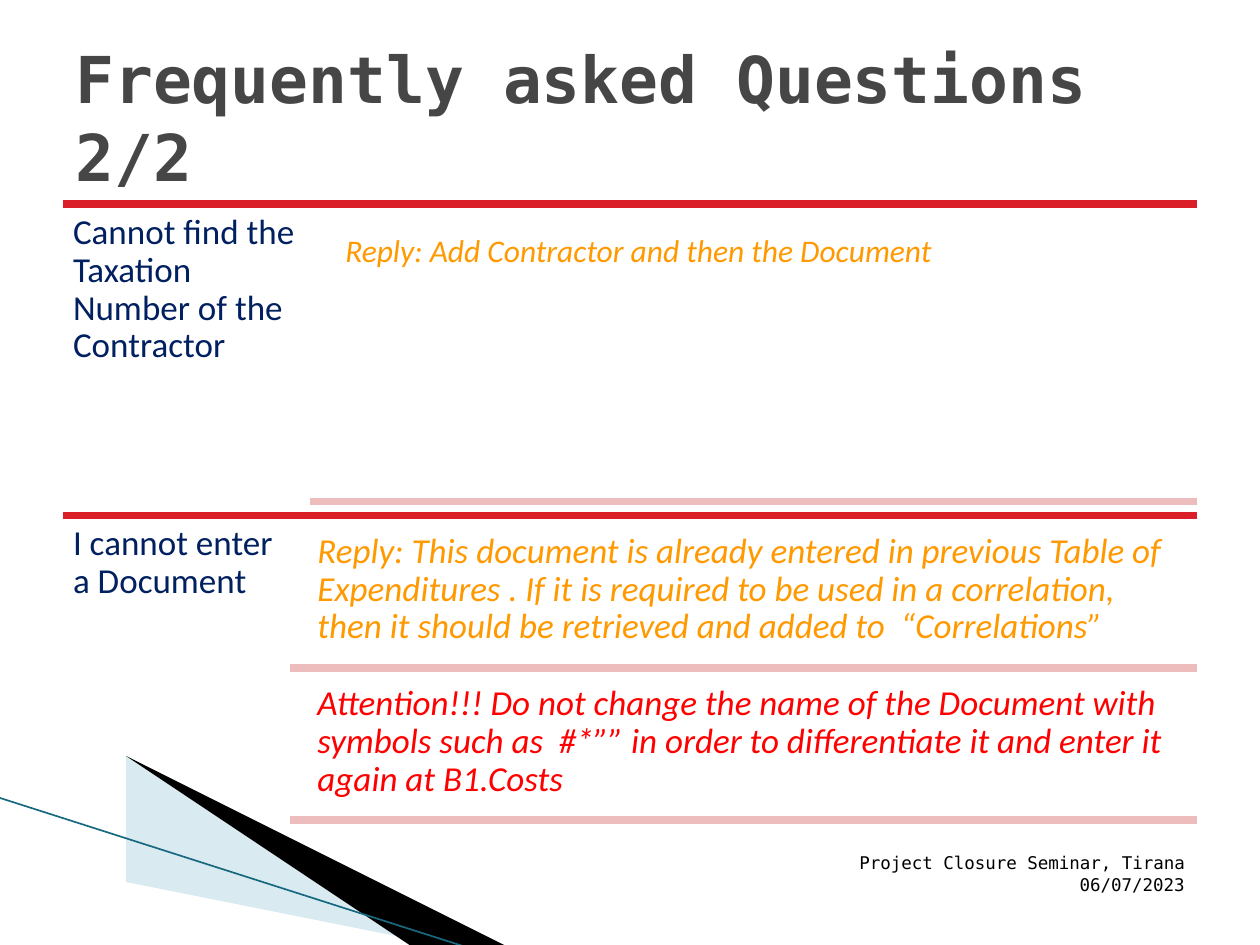
from lxml import etree
from pptx import Presentation, util as u
from pptx.dml.color import RGBColor
from pptx.enum import shapes, text
from pptx.oxml import ns

COLORS = {
    "title": "464646", "question": "002060", "reply": "FF9900",
    "warning": "FF0000", "rule": "DA1F28", "soft_rule": "EDBDBE",
    "wedge": "A0CBDC", "black": "000000", "edge": "17697F",
}
BODY, MONO = "Calibri", "DejaVu Sans Mono"
WIDTH, HEIGHT = 10, 7.5
LEFT, RIGHT = 0.05 * WIDTH, 0.95 * WIDTH
ROW_TOP, ROW_HEIGHT = 1.62, 2.47
RULE_WIDTH = 4.33


def rgb(name):
    return RGBColor.from_string(COLORS[name])


def add_text(slide, words, left, top, width, height, *, size, color, font=BODY,
             bold=False, italic=False, inset=0.08, spacing=0.9,
             anchor=text.MSO_ANCHOR.TOP, align=text.PP_ALIGN.LEFT):
    box = slide.shapes.add_textbox(*map(u.Inches, (left, top, width, height)))
    frame = box.text_frame
    frame.word_wrap = True
    frame.vertical_anchor = anchor
    frame.margin_left = frame.margin_right = u.Inches(inset)
    frame.margin_top = frame.margin_bottom = u.Inches(min(inset, 0.15))
    paragraph = frame.paragraphs[0]
    paragraph.alignment = align
    paragraph.line_spacing = spacing
    run = paragraph.add_run()
    run.text = words
    run.font.name, run.font.size = font, u.Pt(size)
    run.font.bold, run.font.italic = bold, italic
    run.font.color.rgb = rgb(color)
    return frame


def add_line(slide, start, end, color, width=RULE_WIDTH):
    line = slide.shapes.add_connector(
        shapes.MSO_CONNECTOR.STRAIGHT, *map(u.Inches, (*start, *end)))
    line.line.color.rgb = rgb(color)
    line.line.width = u.Pt(width)
    etree.SubElement(line._element.spPr, ns.qn("a:effectLst"))


def add_rule(slide, left, y, color):
    add_line(slide, (left, y), (RIGHT, y), color)


def add_wedge(slide, points, color, opacity=100):
    builder = slide.shapes.build_freeform(*points[0], scale=u.Inches(1))
    builder.add_line_segments(points[1:], close=True)
    wedge = builder.convert_to_shape()
    wedge.shadow.inherit = False
    wedge.fill.solid()
    wedge.fill.fore_color.rgb = rgb(color)
    wedge.line.fill.background()
    if opacity < 100:
        fill = wedge._element.spPr.find(ns.qn("a:solidFill"))
        etree.SubElement(fill[0], ns.qn("a:alpha"), val=str(opacity * 1000))


def add_corner(slide):
    add_wedge(slide, [(0.55, 6.51), (5.95, 7.51), (4.56, 7.51), (0.55, 6.5)],
              "wedge", opacity=40)
    add_wedge(slide, [(0.53, 6.49), (4.57, 7.51), (3.72, 7.52), (0.54, 6.5)],
              "black")
    add_line(slide, (-0.01, 6.33), (3.71, 7.52), "edge", 0.95)


def add_question(slide, row, words, width):
    top = ROW_TOP + row * ROW_HEIGHT
    add_rule(slide, LEFT, top, "rule")
    add_text(slide, words, LEFT, top, width, ROW_HEIGHT,
             size=20, color="question")


def add_reply(slide, words, left, top, height, rule_left, rule_y, *,
              size=20, color="reply", inset=0.08):
    add_text(slide, words, left, top, RIGHT - left, height,
             size=size, color=color, italic=True, inset=inset)
    add_rule(slide, rule_left, rule_y, "soft_rule")


def main():
    deck = Presentation()
    deck.slide_width, deck.slide_height = u.Inches(WIDTH), u.Inches(HEIGHT)
    slide = deck.slides.add_slide(deck.slide_layouts[6])

    # Corner decoration
    add_corner(slide)

    # First question and its reply
    add_question(slide, 0, "Cannot find the Taxation Number of the Contractor", 1.96)
    add_reply(slide, "Reply: Add Contractor and then the Document",
              2.59, 1.73, 2.25, 2.46, 3.98, size=18, inset=0.15)

    # Second question, its reply and the warning
    add_question(slide, 1, "I cannot enter a Document", 1.8)
    add_reply(slide, "Reply: This document is already entered in previous Table of "
              "Expenditures . If it is required to be used in a correlation, then it "
              "should be retrieved and added to  “Correlations”",
              2.44, 4.15, 1.15, 2.3, 5.3)
    add_reply(slide, "Attention!!! Do not change the name of the Document with "
              "symbols such as  #*”” in order to differentiate it and enter it "
              "again at B1.Costs",
              2.44, 5.36, 1.15, 2.3, 6.51, color="warning")

    # Footer and title
    add_text(slide, "Project Closure Seminar, Tirana 06/07/2023",
             6.22, 6.8, RIGHT - 6.22, 0.4, size=10, color="black", font=MONO,
             inset=0.1, spacing=1.0, anchor=text.MSO_ANCHOR.BOTTOM,
             align=text.PP_ALIGN.RIGHT)
    add_text(slide, "Frequently asked Questions 2/2", LEFT, 0.3, RIGHT - LEFT, 1.25,
             size=36.9, color="title", font=MONO, bold=True, inset=0.1,
             spacing=1.0, anchor=text.MSO_ANCHOR.MIDDLE)

    deck.save("out.pptx")


if __name__ == "__main__":
    main()
